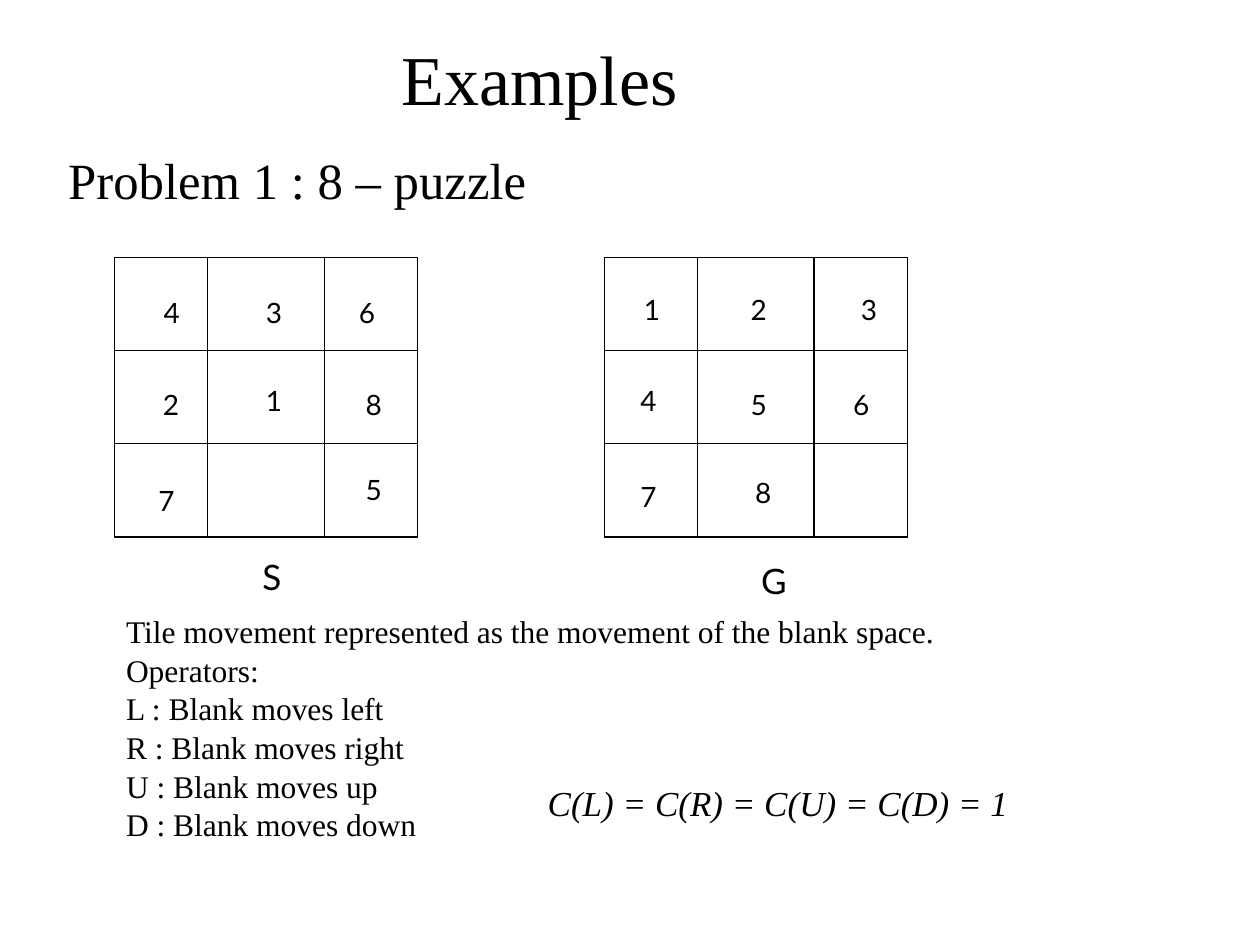
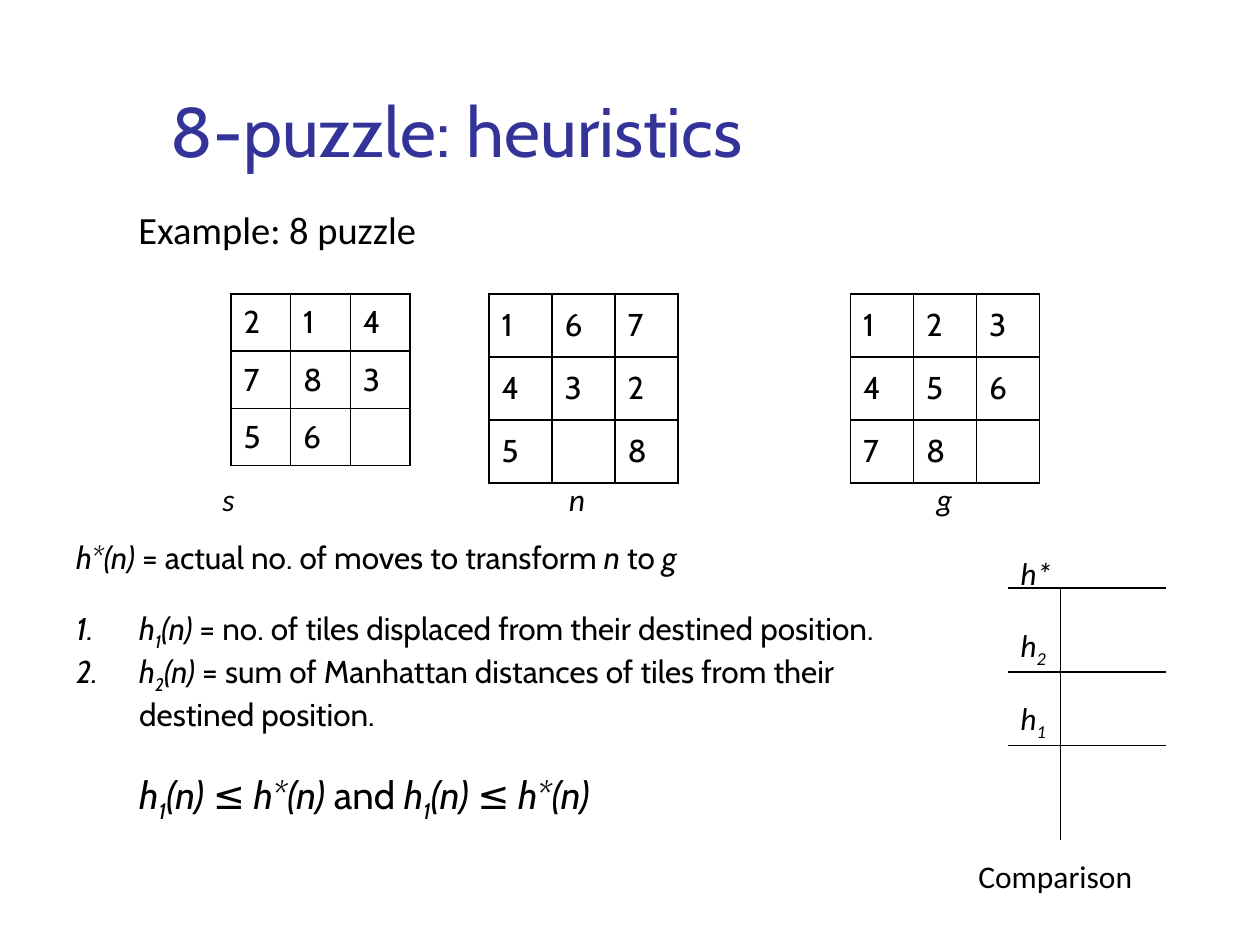
from dataclasses import dataclass
from itertools import accumulate

from lxml import etree
from pptx import Presentation
from pptx.dml.color import RGBColor
from pptx.enum import shapes, text
from pptx.oxml.ns import qn
from pptx.util import Pt


@dataclass(frozen=True)
class Theme:
    ink: RGBColor = RGBColor(0, 0, 0)
    paper: RGBColor = RGBColor(255, 255, 255)
    heading: RGBColor = RGBColor(0x33, 0x33, 0x99)
    serif: str = "Times New Roman"
    tile: str = "Lato"
    body: str = "Cabin"
    label: str = "Calibri"
    title_size: int = 40
    subtitle_size: int = 29
    formula_size: int = 22
    caption_size: int = 20
    text_size: int = 18
    tile_size: int = 16
    rule: float = 0.75
    border: float = 1


T = Theme()


def write(sp, paras, font, size, color=T.ink, inset=(7.2, 3.6), spacing=None, **frame):
    """Fill a shape; a paragraph is a list of (text, marks), i for italic, s for subscript."""
    tf = sp.text_frame
    settings = dict(word_wrap=True, auto_size=text.MSO_AUTO_SIZE.SHAPE_TO_FIT_TEXT,
                    vertical_anchor=text.MSO_ANCHOR.TOP,
                    margin_left=Pt(inset[0]), margin_right=Pt(inset[0]),
                    margin_top=Pt(inset[1]), margin_bottom=Pt(inset[1]))
    for name, value in {**settings, **frame}.items():
        setattr(tf, name, value)
    for i, runs in enumerate(paras):
        p = tf.paragraphs[0] if i == 0 else tf.add_paragraph()
        p.alignment = text.PP_ALIGN.LEFT
        if spacing:
            p.line_spacing = spacing
        for words, marks in runs:
            r = p.add_run()
            r.text = words
            for name, value in dict(name=font, size=Pt(size), italic="i" in marks).items():
                setattr(r.font, name, value)
            r.font.color.rgb = color
            if "s" in marks:
                r.font._element.set("baseline", "-25000")
    return tf


def rule(slide, x1, y1, x2, y2):
    line = slide.shapes.add_connector(shapes.MSO_CONNECTOR.STRAIGHT, *map(Pt, (x1, y1, x2, y2)))
    line.line.color.rgb = T.ink
    line.line.width = Pt(T.rule)
    etree.SubElement(line._element.spPr, qn("a:effectLst"))


prs = Presentation()
prs.slide_width, prs.slide_height = Pt(720), Pt(540)
title_only = prs.slide_layouts[5]
fixed = dict(auto_size=text.MSO_AUTO_SIZE.NONE)
examples, heuristics = (prs.slides.add_slide(title_only) for _ in range(2))

titles = [
    (examples, "Examples", (16.5, 16.5, 636.5, 55.5), T.serif, T.ink,
     dict(inset=(6.5, 3), spacing=1.02)),
    (heuristics, "8-puzzle: heuristics", (90.5, 16.5, 613.5, 115), T.body, T.heading,
     dict(vertical_anchor=text.MSO_ANCHOR.MIDDLE)),
]
for slide, words, box, font, color, options in titles:
    sp = slide.shapes.title
    sp.left, sp.top, sp.width, sp.height = map(Pt, box)
    write(sp, [[(words, "")]], font, T.title_size, color, **fixed, **options)
examples_pPr = examples.shapes.title.text_frame.paragraphs[0]._p.get_or_add_pPr()
examples_pPr.set("marL", str(Pt(206.5)))
examples_pPr.set("indent", "0")

# Examples: start and goal boards
col_widths, row_height = (53.25, 66.5, 53.5), 53.3
board_top, board_width, board_height = 147, sum(col_widths), 3 * row_height
boards = [
    (65.5, [("4", 87, 165.5), ("3", 145.5, 165.5), ("6", 198.5, 165.5),
            ("2", 86.5, 218), ("1", 145.5, 216), ("8", 202.5, 218),
            ("7", 84, 273), ("5", 202.5, 266.5)]),
    (345.5, [("1", 361.5, 163.5), ("2", 422.5, 163.5), ("3", 485.5, 163.5),
             ("4", 359.5, 216), ("5", 422.5, 218), ("6", 481, 218),
             ("7", 359.5, 270.5), ("8", 425, 268.5)]),
]
tight = dict(inset=(6.5, 3), spacing=1.02)
for left, tiles in boards:
    sp = examples.shapes.add_shape(shapes.MSO_SHAPE.RECTANGLE,
                                   *map(Pt, (left, board_top, board_width, board_height)))
    sp.shadow.inherit = False
    sp.fill.background()
    sp.line.color.rgb = T.ink
    sp.line.width = Pt(T.rule)
    for offset in list(accumulate(col_widths))[:2]:
        rule(examples, left + offset, board_top, left + offset, board_top + board_height)
    for row in (1, 2):
        y = board_top + row * row_height
        rule(examples, left, y, left + board_width, y)
    for digit, x, y in tiles:
        sp = examples.shapes.add_textbox(*map(Pt, (x, y, 22.3, 26.5)))
        write(sp, [[(digit, "")]], T.tile, T.tile_size, **tight)

operators = [
    "Tile movement represented as the movement of the blank space.",
    "Operators:",
    "L : Blank moves left",
    "R : Blank moves right",
    "U : Blank moves up",
    "D : Blank moves down",
]
example_texts = [
    ((32.5, 81.5, 669.5, 42), ["Problem 1 : 8 – puzzle"], T.serif, T.subtitle_size, ""),
    ((143.5, 314, 42.5, 29.5), ["S"], T.tile, T.caption_size, ""),
    ((428.5, 316.5, 28, 31), ["G"], T.tile, T.caption_size, ""),
    ((65.5, 346.5, 522.5, 165.5), operators, T.serif, T.text_size, ""),
    ((306.5, 443, 310.5, 31), ["C(L) = C(R) = C(U) = C(D) = 1"], T.serif, T.caption_size, "i"),
]
for box, lines, font, size, marks in example_texts:
    sp = examples.shapes.add_textbox(*map(Pt, box))
    write(sp, [[(line, marks)] for line in lines], font, size, **tight)

# Heuristics: three states of the puzzle
states = [
    (132, 34.1, 32.7, ["214", "783", "56 "]),
    (279.5, 36, 36, ["167", "432", "5 8"]),
    (486, 36, 36, ["123", "456", "78 "]),
]
for left, col_width, height, rows in states:
    table = heuristics.shapes.add_table(
        3, 3, *map(Pt, (left, 168, 3 * col_width, 3 * height))).table
    table.first_row = table.horz_banding = False
    for i, row in enumerate(rows):
        table.columns[i].width = Pt(col_width)
        table.rows[i].height = Pt(height)
        for j, digit in enumerate(row.replace(" ", "·")):
            cell = table.cell(i, j)
            cell.vertical_anchor = text.MSO_ANCHOR.MIDDLE
            if digit != "·":
                r = cell.text_frame.paragraphs[0].add_run()
                r.text = digit
                r.font.name, r.font.size = T.body, Pt(T.text_size)
                r.font.color.rgb = T.ink
            tcPr = cell._tc.get_or_add_tcPr()
            for side in ("lnL", "lnR", "lnT", "lnB"):
                ln = etree.SubElement(tcPr, qn(f"a:{side}"), w=str(Pt(T.border)))
                fill = etree.SubElement(ln, qn("a:solidFill"))
                etree.SubElement(fill, qn("a:srgbClr"), val=str(T.ink))
            cell.fill.solid()
            cell.fill.fore_color.rgb = T.paper

h1, h2 = ([("h", "i"), (n, "is")] for n in "12")
bound = [("(n) ≤ h*(n)", "i")]
labels = [
    ((120, 270.5, 21.5, 29), [("s", "i")], T.text_size),
    ((318, 270.5, 24.5, 29), [("n", "i")], T.text_size),
    ((528, 270.5, 23.5, 29), [("g", "i")], T.text_size),
    ((72, 114, 175, 34), [("Example: 8 puzzle", "")], T.formula_size),
    ((576, 313, 33, 29), [("h*", "i")], T.text_size),
    ((576, 354, 30, 29), h2, T.text_size),
    ((576, 396, 30, 29), h1, T.text_size),
    ((552, 486, 103.5, 29), [("Comparison", "")], T.text_size),
]
for box, runs, size in labels:
    sp = heuristics.shapes.add_textbox(*map(Pt, box))
    write(sp, [runs], T.label, size, word_wrap=False)

definitions = [
    [("h*(n)", "i"), (" = actual no. of moves to transform ", ""), ("n", "i"),
     (" to ", ""), ("g", "i")],
    h1 + [("(n)", "i"), (" = no. of tiles displaced from their destined position.", "")],
    h2 + [("(n)", "i"),
          (" = sum of Manhattan distances of tiles from their destined position.", "")],
    h1 + bound + [(" ", "i"), ("and", ""), (" ", "i")] + h1 + bound,
]
sp = heuristics.shapes.add_textbox(*map(Pt, (36.5, 304, 479, 191.5)))
tf = write(sp, definitions, T.body, T.text_size, **fixed)
_, first, second, formula = tf.paragraphs
first.space_before, formula.space_before = Pt(19), Pt(22)
for r in formula.runs:
    r.font.size = Pt(T.formula_size)
for p in (first, second, formula):
    pPr = p._p.get_or_add_pPr()
    pPr.set("marL", str(Pt(36)))
    pPr.set("indent", str(0 if p is formula else -Pt(36)))
    if p is not formula:
        etree.SubElement(pPr, qn("a:buAutoNum"), type="arabicPeriod")

rule(heuristics, 606, 336, 606, 480)
for y in (336, 384, 426):
    rule(heuristics, 576, y, 666, y)

prs.save("out.pptx")
